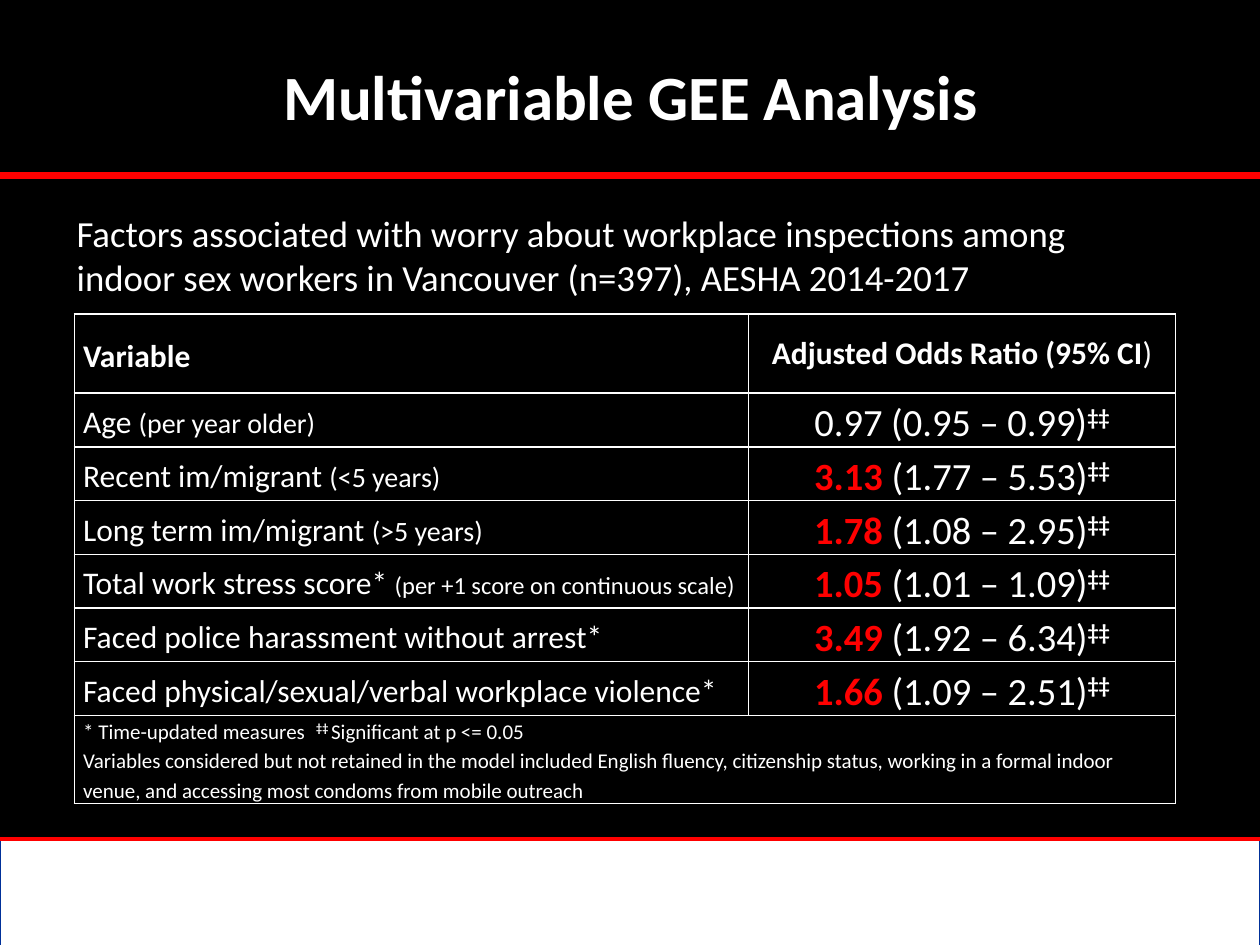
from dataclasses import dataclass

from lxml import etree
from pptx import Presentation
from pptx.dml.color import RGBColor
from pptx.enum.shapes import MSO_CONNECTOR, MSO_SHAPE
from pptx.enum.text import MSO_ANCHOR, PP_ALIGN
from pptx.oxml.ns import qn
from pptx.util import Inches, Pt

LINE = MSO_CONNECTOR.STRAIGHT
RECT = MSO_SHAPE.RECTANGLE
MIDDLE, TOP = MSO_ANCHOR.MIDDLE, MSO_ANCHOR.TOP
LEFT, CENTER = PP_ALIGN.LEFT, PP_ALIGN.CENTER


@dataclass(frozen=True)
class Theme:
    font: str = "Calibri"
    black: RGBColor = RGBColor(0, 0, 0)
    white: RGBColor = RGBColor(255, 255, 255)
    red: RGBColor = RGBColor(255, 0, 0)
    blue: RGBColor = RGBColor(0, 0x30, 0x99)
    title: int = 36
    lead: int = 21
    ratio: int = 22
    body: int = 18
    note: int = 12


THEME = Theme()
MARK = "‡‡"
WIDTH = 10

# Label, detail, detail size, odds ratio, interval, ratio stands out
ROWS = [
    ("Age ", "(per year older)", 16, "0.97", "(0.95 – 0.99)", False),
    ("Recent im/migrant ", "(<5 years)", 16, "3.13", "(1.77 – 5.53)", True),
    ("Long term im/migrant ", "(>5 years)", 16, "1.78", "(1.08 – 2.95)", True),
    ("Total work stress score* ", "(per +1 score on continuous scale)", 14,
     "1.05", "(1.01 – 1.09)", True),
    ("Faced police harassment without arrest*", "", 16, "3.49", "(1.92 – 6.34)", True),
    ("Faced physical/sexual/verbal workplace violence*", "", 16,
     "1.66", "(1.09 – 2.51)", True),
]


def style(para, size, bold=False, align=LEFT):
    para.alignment = align
    font = para.font
    font.name, font.size, font.bold = THEME.font, Pt(size), bold
    font.color.rgb = THEME.white


def add_run(para, text, size=None, bold=None, color=None, raised=False):
    run = para.add_run()
    run.text = text
    if size:
        run.font.size = Pt(size)
    if bold is not None:
        run.font.bold = bold
    if color is not None:
        run.font.color.rgb = color
    if raised:
        run.font._element.set("baseline", "30000")


def add_rule(slide, top, weight):
    rule = slide.shapes.add_connector(LINE, 0, Inches(top), Inches(WIDTH), Inches(top))
    rule.line.color.rgb = THEME.red
    rule.line.width = Pt(weight)
    etree.SubElement(rule._element.spPr, qn("a:effectLst"))


def add_title(slide, left, top, width, height):
    box = slide.shapes.add_textbox(*map(Inches, (left, top, width, height)))
    frame = box.text_frame
    frame.word_wrap = True
    frame.vertical_anchor = MIDDLE
    para = frame.paragraphs[0]
    style(para, THEME.title, True, CENTER)
    add_run(para, "Multivariable GEE Analysis")
    add_rule(slide, top + height + 0.01, 4)


def add_lead(slide, left, top, width, height):
    box = slide.shapes.add_textbox(*map(Inches, (left, top, width, height)))
    frame = box.text_frame
    frame.word_wrap = True
    para = frame.paragraphs[0]
    style(para, THEME.lead)
    add_run(para, "Factors associated with worry about workplace inspections among")
    para.add_line_break()
    add_run(para, "indoor sex workers in Vancouver (n=397), AESHA 2014-2017")


def add_footer(slide, left, top, width, height):
    band = slide.shapes.add_shape(RECT, *map(Inches, (left, top, width, height)))
    band.shadow.inherit = False
    band.fill.solid()
    band.fill.fore_color.rgb = THEME.white
    band.line.color.rgb = THEME.blue
    band.line.width = Pt(0.75)
    add_rule(slide, top, 2.25)


def frame_cell(cell):
    cell.margin_left = cell.margin_right = Inches(0.07)
    cell.margin_top = cell.margin_bottom = 0
    cell.vertical_anchor = MIDDLE
    props = cell._tc.get_or_add_tcPr()
    for side in ("a:lnL", "a:lnR", "a:lnT", "a:lnB"):
        edge = etree.SubElement(props, qn(side), w=str(Pt(1)))
        fill = etree.SubElement(edge, qn("a:solidFill"))
        etree.SubElement(fill, qn("a:srgbClr"), val=str(THEME.white))
    cell.fill.solid()
    cell.fill.fore_color.rgb = THEME.black


def fill_note(cell):
    cell.vertical_anchor = TOP
    para = cell.text_frame.paragraphs[0]
    para.line_spacing = 1.15
    tabs = etree.SubElement(para._p.get_or_add_pPr(), qn("a:tabLst"))
    etree.SubElement(tabs, qn("a:tab"), pos=str(Inches(1.85)), algn="l")
    style(para, THEME.note)
    add_run(para, "* Time-updated measures\t")
    add_run(para, MARK + " ", bold=True, raised=True)
    add_run(para, "Significant at p <= 0.05")
    para = cell.text_frame.add_paragraph()
    para.line_spacing = 1.15
    style(para, THEME.note)
    add_run(para, "Variables considered but not retained in the model included English "
            "fluency, citizenship status, working in a formal indoor venue, and "
            "accessing most condoms from mobile outreach")


def add_grid(slide, left, top, width, height):
    head, foot, split = 0.63, 0.7, 5.35
    step = (height - head - foot) / len(ROWS)
    last = len(ROWS) + 1
    table = slide.shapes.add_table(
        last + 1, 2, *map(Inches, (left, top, width, height))).table
    table.first_row = table.horz_banding = False
    for col, span in zip(table.columns, (split, width - split)):
        col.width = Inches(span)
    for row, tall in zip(table.rows, [head] + [step] * len(ROWS) + [foot]):
        row.height = Inches(tall)
    for cell in table.iter_cells():
        frame_cell(cell)

    # Header
    para = table.cell(0, 0).text_frame.paragraphs[0]
    para.line_spacing = 1.15
    style(para, THEME.body, True)
    add_run(para, "Variable")
    para = table.cell(0, 1).text_frame.paragraphs[0]
    style(para, THEME.body, True, CENTER)
    add_run(para, "Adjusted Odds Ratio (95% CI")
    add_run(para, ")", bold=False)

    # Factors
    for i, (label, detail, size, ratio, span, strong) in enumerate(ROWS, 1):
        para = table.cell(i, 0).text_frame.paragraphs[0]
        para.line_spacing = 1.15
        style(para, THEME.body)
        add_run(para, label)
        if detail:
            add_run(para, detail, size)
        para = table.cell(i, 1).text_frame.paragraphs[0]
        para.line_spacing = 1.15
        style(para, THEME.ratio, align=CENTER)
        add_run(para, ratio, bold=strong, color=THEME.red if strong else None)
        add_run(para, " " + span)
        add_run(para, MARK, bold=True, raised=True)

    # Footnotes
    table.cell(last, 0).merge(table.cell(last, 1))
    fill_note(table.cell(last, 0))


def main():
    deck = Presentation()
    deck.slide_width, deck.slide_height = Inches(WIDTH), Inches(7.5)
    slide = deck.slides.add_slide(deck.slide_layouts[6])
    slide.background.fill.solid()
    slide.background.fill.fore_color.rgb = THEME.black
    add_footer(slide, 0, 6.66, WIDTH, 0.87)
    add_lead(slide, 0.51, 1.62, 9.13, 0.81)
    add_title(slide, 0.2, 0.13, 9.61, 1.25)
    add_grid(slide, 0.59, 2.49, 8.74, 3.89)
    deck.save("out.pptx")


if __name__ == "__main__":
    main()
